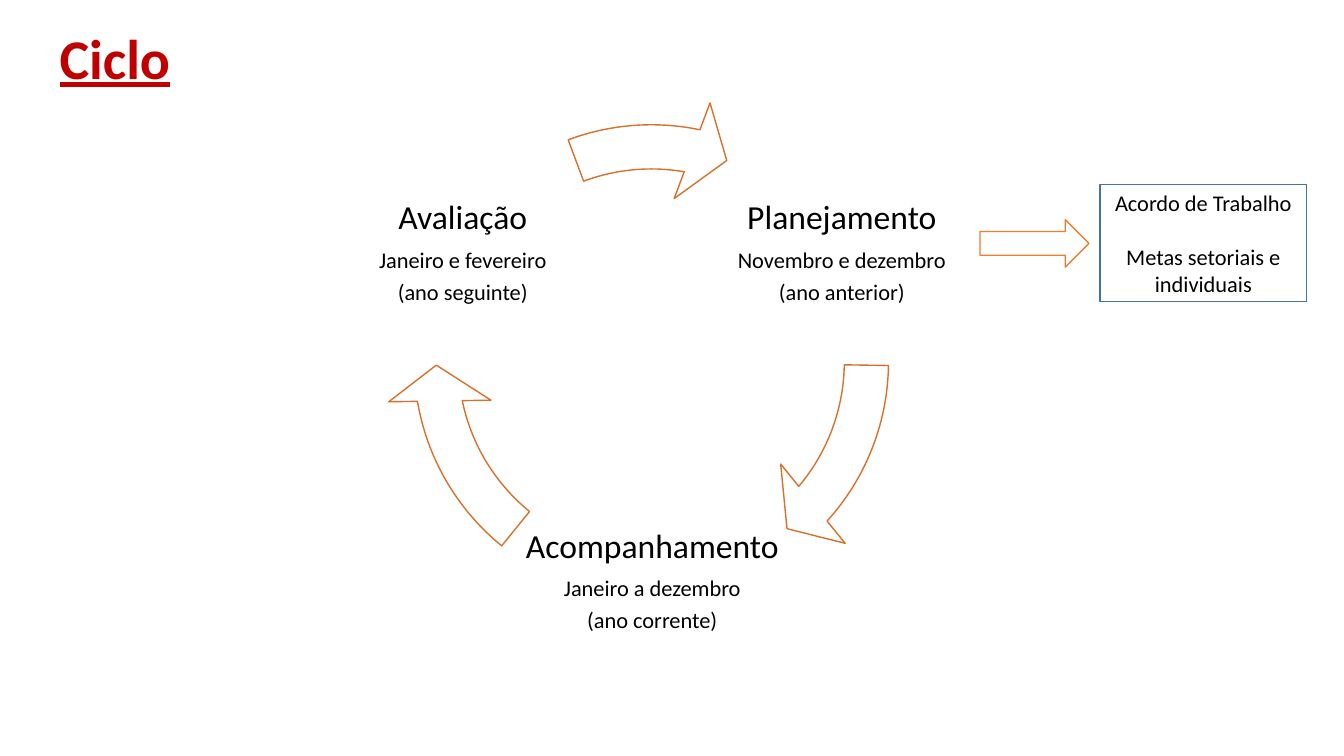
from dataclasses import dataclass

from pptx import Presentation
from pptx import util as u
from pptx.dml.color import RGBColor
from pptx.enum import shapes, text

FONT = "Calibri"
BLACK, WHITE, RED = "000000", "FFFFFF", "C00000"
ORANGE, DARK_ORANGE, BLUE = "ED7D31", "D7712C", "43739E"
RING = (3.82, 0.95, 5.28, 5.28)
STAGE_HEIGHT = 2.24


@dataclass
class Stage:
    name: str
    months: str
    year: str
    left: float
    top: float
    width: float
    arrow_end: float    # arrow angles, in the preset's adjustment units
    arrow_start: float


STAGES = [
    Stage("Planejamento", "Novembro e dezembro", "(ano anterior)",
          7.23, 1.39, 2.24, 24.768, 0.527),
    Stage("Acompanhamento", "Janeiro a dezembro", "(ano corrente)",
          5.1, 4.65, 2.74, 101.709, 77.468),
    Stage("Avaliação", "Janeiro e fevereiro", "(ano seguinte)",
          3.47, 1.39, 2.24, 168.554, 149.682),
]


def rgb(value: str) -> RGBColor:
    return RGBColor.from_string(value)


def inches(*values: float) -> list:
    return [u.Inches(v) for v in values]


def add_run(p, words: str, size: int, color: str = BLACK):
    r = p.add_run()
    r.text = words
    r.font.name, r.font.size = FONT, u.Pt(size)
    r.font.color.rgb = rgb(color)
    return r


def add_paragraph(tf, index: int):
    p = tf.paragraphs[0] if index == 0 else tf.add_paragraph()
    p.alignment = text.PP_ALIGN.CENTER
    return p


def add_outlined(s, kind, box: tuple, line: str, fill: str = ""):
    sp = s.shapes.add_shape(kind, *inches(*box))
    sp.shadow.inherit = False
    if fill:
        sp.fill.solid()
        sp.fill.fore_color.rgb = rgb(fill)
    else:
        sp.fill.background()
    sp.line.color.rgb = rgb(line)
    sp.line.width = u.Pt(1)
    return sp


def add_stage(s, stage: Stage) -> None:
    sp = s.shapes.add_textbox(
        *inches(stage.left, stage.top, stage.width, STAGE_HEIGHT))
    tf = sp.text_frame
    tf.word_wrap = True
    tf.vertical_anchor = text.MSO_ANCHOR.MIDDLE
    tf.margin_left = tf.margin_right = u.Inches(0.03)
    tf.margin_top = tf.margin_bottom = u.Inches(0.03)
    lines = [(stage.name, 24), (stage.months, 16), (stage.year, 16)]
    for i, (words, size) in enumerate(lines):
        p = add_paragraph(tf, i)
        p.line_spacing = 0.9
        p.space_after = u.Pt(0.35 * size)
        add_run(p, words, size)

    arrow = add_outlined(s, shapes.MSO_SHAPE.CIRCULAR_ARROW, RING,
                         DARK_ORANGE, WHITE)
    values = (0.083, 5.764, stage.arrow_end, stage.arrow_start, 0.096)
    for i, value in enumerate(values):
        arrow.adjustments[i] = value


def add_title(s, words: str) -> None:
    sp = s.shapes.title
    sp.left, sp.top, sp.width, sp.height = inches(0.49, 0.18, 4.73, 0.77)
    tf = sp.text_frame
    tf.auto_size = text.MSO_AUTO_SIZE.NONE
    tf.vertical_anchor = text.MSO_ANCHOR.TOP
    p = tf.paragraphs[0]
    p.alignment = text.PP_ALIGN.LEFT
    r = add_run(p, words, 40, RED)
    r.font.bold = r.font.underline = True


def add_agreement(s) -> None:
    add_outlined(s, shapes.MSO_SHAPE.RIGHT_ARROW, (9.72, 2.18, 1.08, 0.47),
                 ORANGE, WHITE)
    sp = add_outlined(s, shapes.MSO_SHAPE.RECTANGLE,
                      (10.91, 1.83, 2.05, 1.16), BLUE)
    tf = sp.text_frame
    tf.word_wrap = True
    tf.vertical_anchor = text.MSO_ANCHOR.MIDDLE
    for i, words in enumerate(["Acordo de Trabalho",
                               "Metas setoriais e individuais"]):
        p = add_paragraph(tf, i)
        if i:
            p.space_before = u.Pt(19.5)
        add_run(p, words, 16)


def main() -> None:
    prs = Presentation()
    prs.slide_width, prs.slide_height = inches(13.33, 7.5)
    s = prs.slides.add_slide(prs.slide_layouts[5])

    # Title
    add_title(s, "Ciclo")

    # Cycle: each stage and the arrow that follows it
    for stage in STAGES:
        add_stage(s, stage)

    # Outcome of the planning stage
    add_agreement(s)

    prs.save("out.pptx")


if __name__ == "__main__":
    main()
